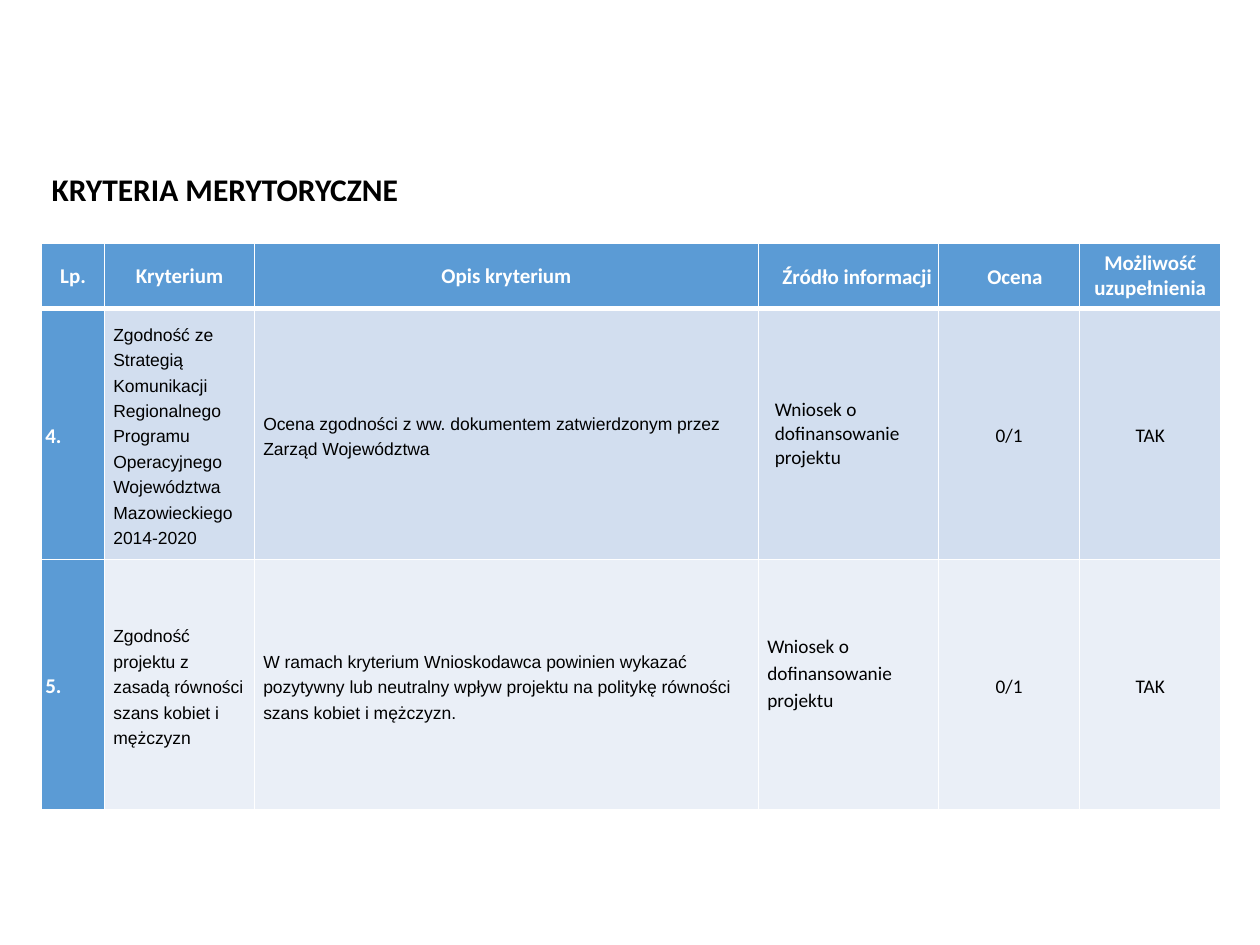
"""Build the slide with the table of substantive criteria."""
from dataclasses import dataclass, replace

from lxml import etree
from pptx import Presentation
from pptx.dml.color import RGBColor
from pptx.enum.text import MSO_ANCHOR, MSO_AUTO_SIZE, PP_ALIGN
from pptx.oxml.ns import qn
from pptx.util import Inches, Pt

LEFT, CENTER, JUSTIFY = PP_ALIGN.LEFT, PP_ALIGN.CENTER, PP_ALIGN.JUSTIFY
MIDDLE = MSO_ANCHOR.MIDDLE
FIT_SHAPE = MSO_AUTO_SIZE.SHAPE_TO_FIT_TEXT
WHITE, BLACK, BLUE = "FFFFFF", "000000", "5B9BD5"
BANDS = ("D2DEEF", "EAEFF7")
COL_WIDTHS = (0.5, 1.19, 4, 1.43, 1.12, 1.12)
ROW_HEIGHTS = (0.52, 1.99, 1.99)
SOURCE = "Wniosek o dofinansowanie projektu"


@dataclass(frozen=True)
class CellStyle:
    """Text format of a cell; margins are left, top, right, bottom in inches."""
    size: float = 11
    font: str = "Calibri"
    color: str = BLACK
    bold: bool = False
    align: PP_ALIGN = LEFT
    line: float = 1.15
    margins: tuple[float, ...] = (0.07, 0, 0.07, 0)
    margin_left: float = 0
    indent: float = 0


@dataclass(frozen=True)
class Criterion:
    """One criterion with the style of its source cell."""
    number: str
    name: str
    description: str
    source_style: CellStyle


HEAD = CellStyle(12, color=WHITE, bold=True, align=CENTER, line=1,
                 margins=(0.1, 0.05, 0.1, 0.05))
HEAD_TIGHT = replace(HEAD, line=1.15, margins=(0, 0, 0, 0))
NUMBER = replace(HEAD_TIGHT, align=JUSTIFY, margins=(0.03, 0, 0.03, 0))
BODY = CellStyle(10, "Arial", line=1.3)
MARK = CellStyle(align=CENTER)

HEADERS = (
    ("Lp.", HEAD),
    ("Kryterium", HEAD),
    ("Opis kryterium", HEAD),
    ("Źródło informacji", replace(HEAD_TIGHT, align=LEFT, indent=0.19)),
    ("Ocena", replace(HEAD_TIGHT, margin_left=0.09)),
    ("Możliwość uzupełnienia", HEAD),
)
CRITERIA = (
    Criterion("4.", "Zgodność ze Strategią Komunikacji Regionalnego Programu "
              "Operacyjnego Województwa Mazowieckiego 2014-2020",
              "Ocena zgodności z ww. dokumentem zatwierdzonym przez Zarząd "
              "Województwa", CellStyle(line=1, margin_left=0.06)),
    Criterion("5.", "Zgodność projektu z zasadą równości szans kobiet i mężczyzn",
              "W ramach kryterium Wnioskodawca powinien wykazać pozytywny lub "
              "neutralny wpływ projektu na politykę równości szans kobiet i "
              "mężczyzn.", CellStyle(margins=(0.07, 0, 0.07, 0.2))),
)


def rgb(value: str) -> RGBColor:
    """Return the colour of a hex string."""
    return RGBColor.from_string(value)


def set_attrs(obj, values: dict) -> None:
    """Set every attribute named in values."""
    for name, value in values.items():
        setattr(obj, name, value)


def format_font(font, style: CellStyle) -> None:
    """Apply the font part of a style."""
    set_attrs(font, {"name": style.font, "size": Pt(style.size), "bold": style.bold})
    font.color.rgb = rgb(style.color)


def set_borders(cell, widths: dict[str, float]) -> None:
    """Draw white cell borders with the given widths in points."""
    tc_pr = cell._tc.get_or_add_tcPr()
    for i, (side, width) in enumerate(widths.items()):
        ln = etree.Element(qn(f"a:{side}"), w=str(Pt(width)))
        fill = etree.SubElement(ln, qn("a:solidFill"))
        etree.SubElement(fill, qn("a:srgbClr"), val=WHITE)
        tc_pr.insert(i, ln)


def fill_cell(cell, text: str, style: CellStyle, fill: str, row: int) -> None:
    """Write and format one table cell."""
    left, top, right, bottom = map(Inches, style.margins)
    set_attrs(cell, {"text": text, "vertical_anchor": MIDDLE,
                     "margin_left": left, "margin_top": top,
                     "margin_right": right, "margin_bottom": bottom})
    cell.fill.solid()
    cell.fill.fore_color.rgb = rgb(fill)
    p = cell.text_frame.paragraphs[0]
    set_attrs(p, {"alignment": style.align, "line_spacing": style.line})
    p_pr = p._p.get_or_add_pPr()
    p_pr.set("marL", str(Inches(style.margin_left)))
    p_pr.set("indent", str(Inches(style.indent)))
    format_font(p.runs[0].font, style)
    set_borders(cell, {"lnL": 1, "lnR": 1, "lnT": 3 if row == 1 else 1,
                       "lnB": 3 if row == 0 else 1})


def add_title(s, text: str) -> None:
    """Place and format the slide title."""
    sp = s.shapes.title
    set_attrs(sp, {"left": Inches(0.31), "top": Inches(1.3),
                   "width": Inches(3.15), "height": Inches(0.4)})
    tf = sp.text_frame
    set_attrs(tf, {"text": text, "word_wrap": False, "vertical_anchor": MIDDLE,
                   "auto_size": FIT_SHAPE})
    p = tf.paragraphs[0]
    p.alignment = LEFT
    format_font(p.runs[0].font, CellStyle(18, bold=True))


def add_criteria_table(s) -> None:
    """Add the table with its header and one row per criterion."""
    table = s.shapes.add_table(
        len(ROW_HEIGHTS), len(COL_WIDTHS), Inches(0.33), Inches(1.93),
        Inches(sum(COL_WIDTHS)), Inches(sum(ROW_HEIGHTS))).table
    table.horz_banding = False
    for column, width in zip(table.columns, COL_WIDTHS):
        column.width = Inches(width)
    for row, height in zip(table.rows, ROW_HEIGHTS):
        row.height = Inches(height)
    for col, (text, style) in enumerate(HEADERS):
        fill_cell(table.cell(0, col), text, style, BLUE, 0)
    for row, (item, band) in enumerate(zip(CRITERIA, BANDS), start=1):
        entries = ((item.number, NUMBER), (item.name, BODY),
                   (item.description, BODY), (SOURCE, item.source_style),
                   ("0/1", MARK), ("TAK", MARK))
        for col, (text, style) in enumerate(entries):
            fill = BLUE if col == 0 else band
            fill_cell(table.cell(row, col), text, style, fill, row)


def main() -> None:
    """Build and save the presentation."""
    prs = Presentation()
    set_attrs(prs, {"slide_width": Inches(10), "slide_height": Inches(7.5)})
    s = prs.slides.add_slide(prs.slide_layouts[5])
    add_title(s, "KRYTERIA MERYTORYCZNE")
    add_criteria_table(s)
    prs.save("out.pptx")


if __name__ == "__main__":
    main()
